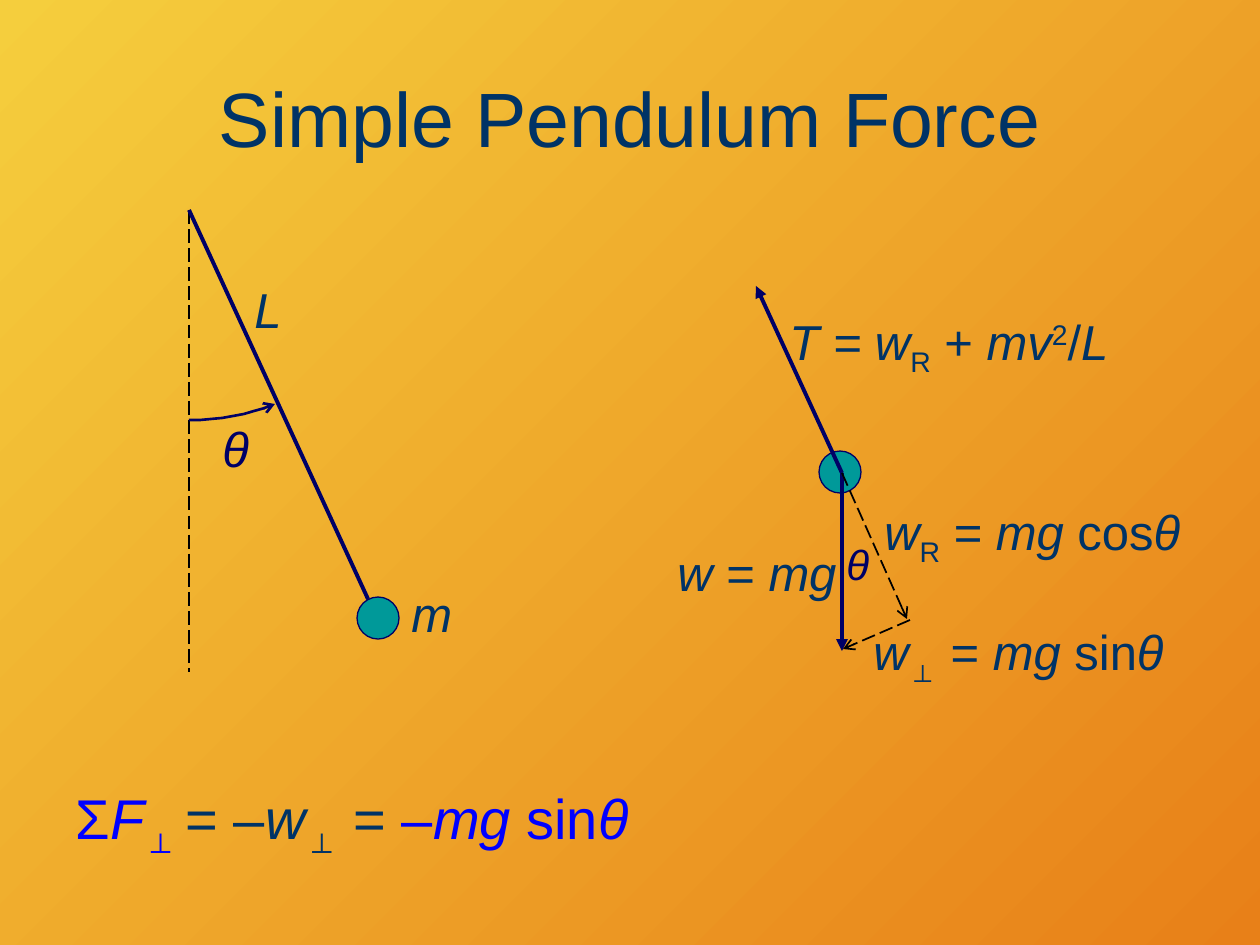
from pptx import Presentation
from pptx.util import Pt
from pptx.dml.color import RGBColor as RGB
from pptx.enum.dml import MSO_LINE as Dash
from pptx.enum.shapes import MSO_CONNECTOR as Conn, MSO_SHAPE as Shape
from pptx.enum.text import MSO_ANCHOR as Anchor, PP_ALIGN as Align
from pptx.oxml.ns import qn
from lxml.etree import SubElement as sub

PX = 914400 / 126
GOLD, RUST = RGB(0xF5, 0xCE, 0x3D), RGB(0xE8, 0x80, 0x18)
TEXT, NAVY = RGB(0x00, 0x33, 0x66), RGB(0x00, 0x00, 0x66)
BLUE, TEAL = RGB(0x00, 0x00, 0xFF), RGB(0x00, 0x99, 0x99)
BLACK = RGB(0, 0, 0)

# Run styles: i italic, _ subscript, ^ superscript, b blue
BASE = {"_": "-25000", "^": "30000"}
TITLE = [("Simple Pendulum Force", "")]
FORCE = [("Σ", "b"), ("F", "bi"), ("⊥ ", "b_"), ("= –", ""), ("w", "i"),
         ("⊥", "_"), (" = ", ""), ("–", "b"), ("mg ", "bi"), ("sin", "b"),
         ("θ", "bi")]
TENSION = [("T = w", "i"), ("R", "_"), (" + ", ""), ("mv", "i"), ("2", "^"),
           ("/", ""), ("L", "i")]
WEIGHT = [("w", "i"), (" = ", ""), ("mg", "i")]
THETA = [("θ", "i")]


def part(mark, trig):
    """Runs for one component of the weight."""
    return [("w", "i"), (mark, "_"), (" = ", ""), ("mg ", "i"), (trig, ""),
            ("θ", "i")]


# box, runs, size, colour, wrap
LABELS = [
    ((210, 412, 66, 72), THETA, 28, NAVY, True),
    ((242, 273, 53, 72), [("L", "i")], 28, TEXT, False),
    ((399, 577, 67, 72), [("m", "i")], 28, TEXT, False),
    ((777, 305, 368, 72), TENSION, 28, TEXT, True),
    ((665, 536, 185, 72), WEIGHT, 28, TEXT, False),
    ((834, 532, 55, 63), THETA, 24, NAVY, True),
    ((861, 615, 336, 72), part("⊥", "sin"), 28, TEXT, True),
    ((872, 495, 336, 72), part("R", "cos"), 28, TEXT, True),
]

PIVOT, HUB = (189, 210), (842, 473)
BALLS = [(819, 451), (357, 597)]
BALL = 42
# start, end, colour, width, dash, arrowhead
LINES = [
    (PIVOT, (189, 672), BLACK, 1, Dash.LONG_DASH, None),
    (PIVOT, (368, 599), NAVY, 2.25, None, None),
    (HUB, (756, 286), NAVY, 2.25, None, "triangle"),
    (HUB, (842, 651), NAVY, 2.25, None, "triangle"),
    ((910, 620), (843, 649), BLACK, 1, Dash.LONG_DASH, "arrow"),
    (HUB, (907, 619), BLACK, 1, Dash.LONG_DASH, "arrow"),
]
ARC = [(189, 420), (218, 420), (248, 415), (275, 404)]
STEPS = 8


def emu(*vals):
    return [round(v * PX) for v in vals]


def style(line, tint, width, dash=None, tip=None):
    line.color.rgb = tint
    for name, val in {"width": Pt(width), "dash_style": dash}.items():
        setattr(line, name, val)
    if tip:
        sub(line._get_or_add_ln(), qn("a:tailEnd"), type=tip)


def write(box, runs, size, tint, wrap=True, **fmt):
    frame = slide.shapes.add_textbox(*emu(*box)).text_frame
    frame.word_wrap = wrap
    frame.vertical_anchor = fmt.pop("anchor", Anchor.TOP)
    para = frame.paragraphs[0]
    for name, val in fmt.items():
        setattr(para, name, val)
    for text, flags in runs:
        run = para.add_run()
        run.text = text
        look = {"name": "Arial", "size": Pt(size), "italic": "i" in flags}
        for name, val in look.items():
            setattr(run.font, name, val)
        run.font.color.rgb = BLUE if "b" in flags else tint
        for flag in BASE.keys() & set(flags):
            run._r.get_or_add_rPr().set("baseline", BASE[flag])


def curve(t):
    """Point at t on the cubic Bezier curve ARC."""
    mix = [(1 - t) ** 3, 3 * t * (1 - t) ** 2, 3 * t * t * (1 - t), t ** 3]
    return tuple(sum(m * p[k] for m, p in zip(mix, ARC)) for k in (0, 1))


prs = Presentation()
prs.slide_width, prs.slide_height = emu(1260, 945)
slide = prs.slides.add_slide(prs.slide_layouts[6])
fill = slide.background.fill
fill.gradient()
fill.gradient_angle = 315
for stop, tint, pos in zip(fill.gradient_stops, (GOLD, RUST), (0, 1)):
    stop.color.rgb = tint
    stop.position = pos

write((63, 38, 1134, 158), TITLE, 44, TEXT,
      anchor=Anchor.MIDDLE, alignment=Align.CENTER)
write((63, 777, 1134, 84), FORCE, 32, TEXT, space_before=Pt(6.4))

for x, y in BALLS:
    ball = slide.shapes.add_shape(Shape.OVAL, *emu(x, y, BALL, BALL))
    ball.shadow.inherit = False
    ball.fill.solid()
    ball.fill.fore_color.rgb = TEAL
    style(ball.line, NAVY, 0.75)

for start, end, *look in LINES:
    link = slide.shapes.add_connector(Conn.STRAIGHT, *emu(*start, *end))
    style(link.line, *look)
    sub(link._element.spPr, qn("a:effectLst"))

pen = slide.shapes.build_freeform(*ARC[0], scale=PX)
pen.add_line_segments([curve(n / STEPS) for n in range(1, STEPS + 1)],
                      close=False)
arc = pen.convert_to_shape()
arc.shadow.inherit = False
arc.fill.background()
style(arc.line, NAVY, 1.5, tip="arrow")

for label in LABELS:
    write(*label)

prs.save("out.pptx")
